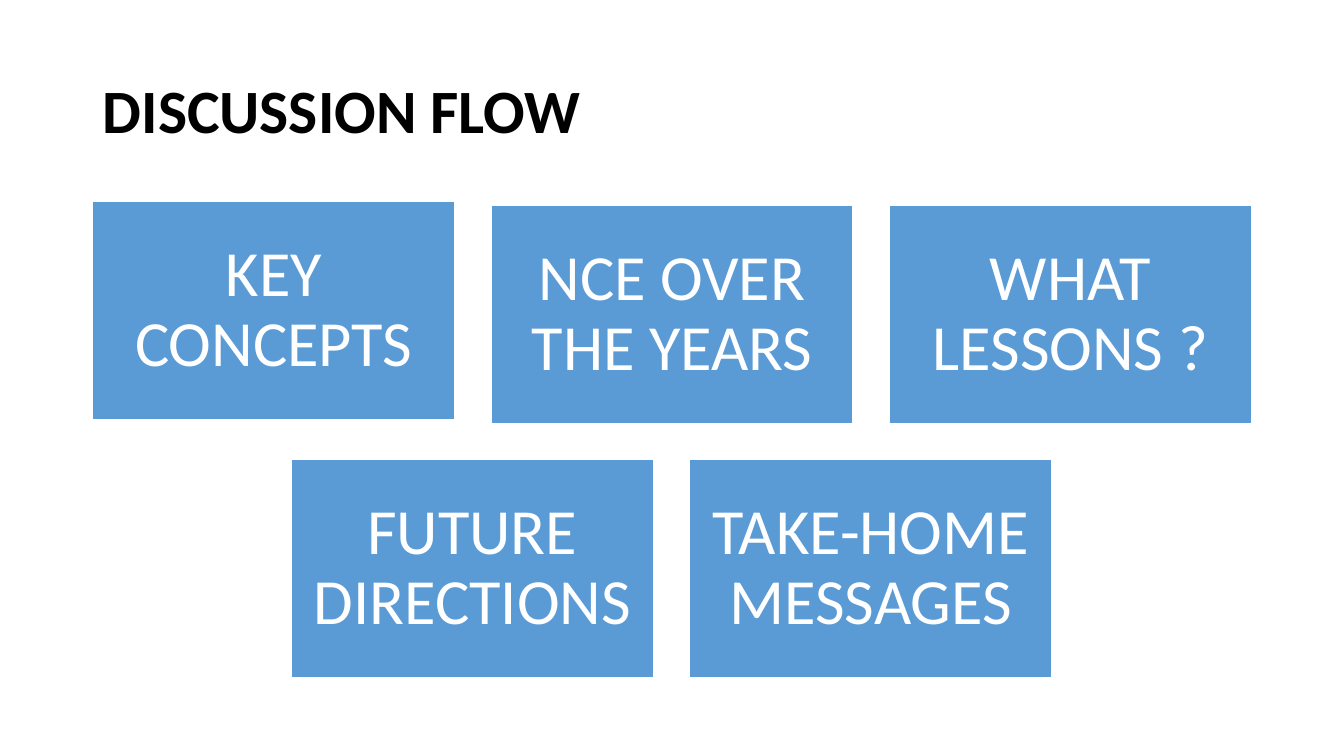
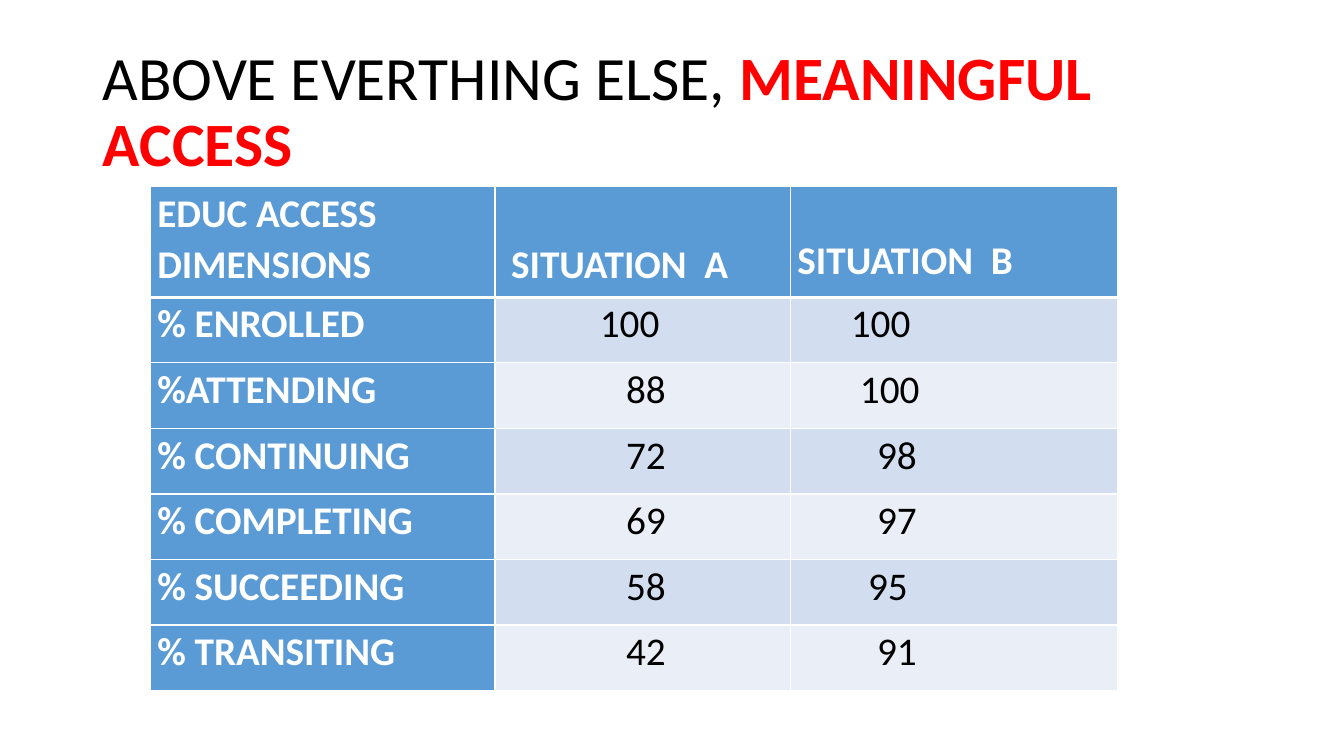
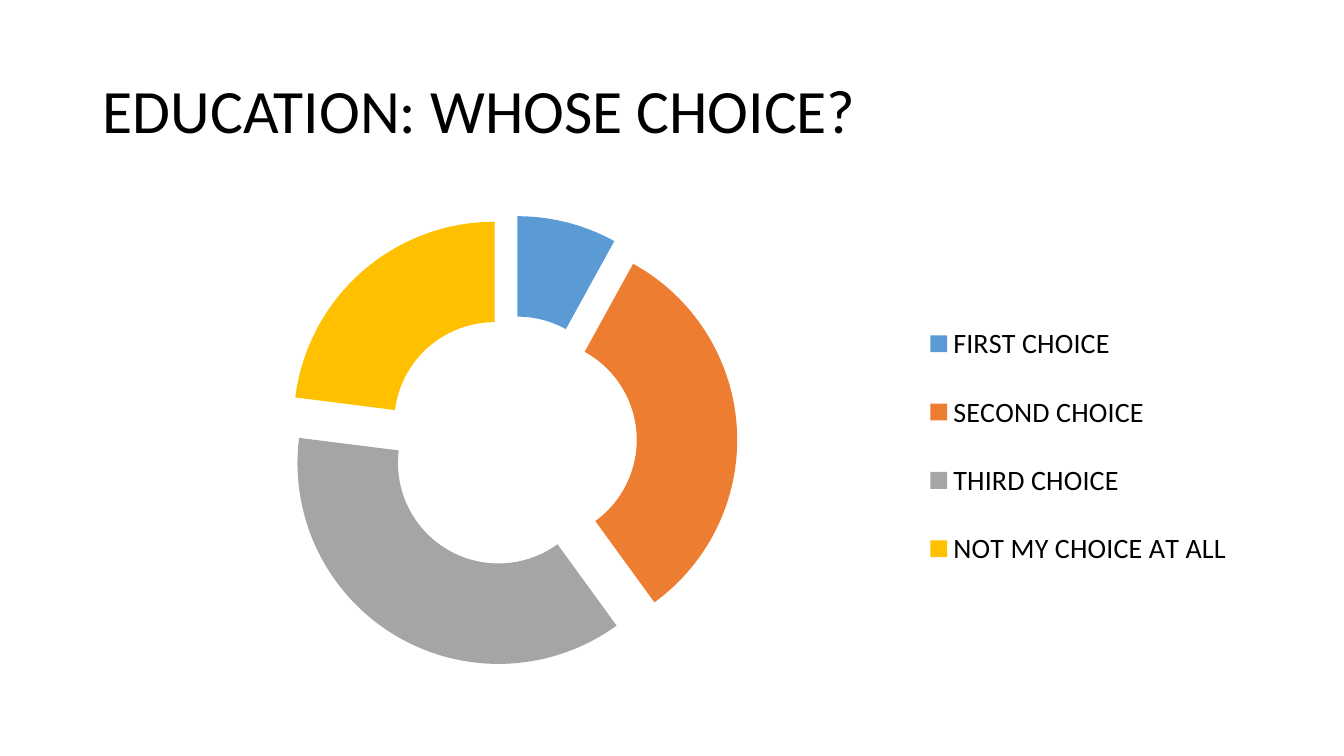
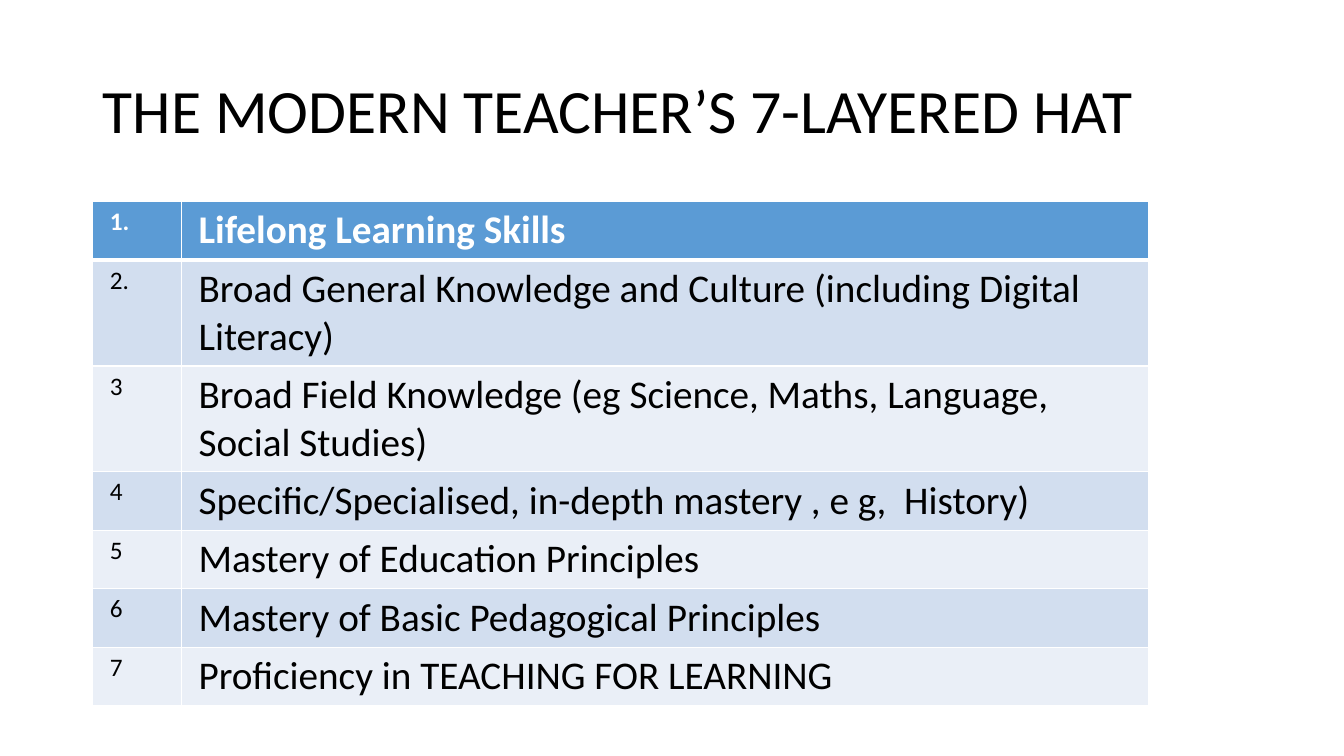
from dataclasses import dataclass
from typing import NamedTuple

from lxml.etree import SubElement
from pptx import Presentation
from pptx.chart.data import CategoryChartData
from pptx.dml.color import RGBColor
from pptx.enum.chart import XL_CHART_TYPE, XL_LEGEND_POSITION
from pptx.enum.shapes import MSO_SHAPE
from pptx.enum.text import MSO_ANCHOR, MSO_AUTO_SIZE, PP_ALIGN
from pptx.oxml import parse_xml
from pptx.oxml.ns import nsdecls, qn
from pptx.util import Emu, Pt

SCALE = 9144  # EMU per px, 100 px to the inch
FONT = "Calibri"
BLACK = RGBColor(0x00, 0x00, 0x00)
WHITE = RGBColor(0xFF, 0xFF, 0xFF)
RED = RGBColor(0xFF, 0x00, 0x00)
BLUE = RGBColor(0x5B, 0x9B, 0xD5)
ORANGE = RGBColor(0xED, 0x7D, 0x31)
GREY = RGBColor(0xA5, 0xA5, 0xA5)
GOLD = RGBColor(0xFF, 0xC0, 0x00)
BANDS = (RGBColor(0xEA, 0xEF, 0xF7), RGBColor(0xD2, 0xDE, 0xEF))


class Part(NamedTuple):
    text: str
    color: RGBColor = BLACK
    bold: bool = False


class Cell(NamedTuple):
    text: str
    size: int = 28
    indent: int = 0
    lift: int | None = None  # gap below text that stands at the bottom


class Slice(NamedTuple):
    name: str
    value: int
    color: RGBColor


@dataclass(frozen=True)
class Grid:
    left: int
    top: int
    cols: list[int]
    rows: list[int]
    pad_x: int
    pad_y: int
    lead: float
    side_head: bool


def px(count: int) -> Emu:
    return Emu(count * SCALE)


def box(left: int, top: int, width: int, height: int) -> tuple[Emu, ...]:
    return px(left), px(top), px(width), px(height)


def style(font, size: int, color: RGBColor, bold: bool = False) -> None:
    font.name, font.size, font.bold = FONT, Pt(size), bold
    font.color.rgb = color


def add_slide(deck, *parts: Part):
    """Add a slide whose title is made of the parts."""
    slide = deck.slides.add_slide(deck.slide_layouts[5])
    title = slide.shapes.title
    title.left, title.top, title.width, title.height = box(92, 40, 1150, 145)
    frame = title.text_frame
    frame.auto_size = MSO_AUTO_SIZE.NONE
    frame.vertical_anchor = MSO_ANCHOR.MIDDLE
    line = frame.paragraphs[0]
    line.alignment, line.line_spacing = PP_ALIGN.LEFT, 0.9
    style(line.font, 44, BLACK)
    for part in parts:
        run = line.add_run()
        run.text = part.text
        run.font.bold = part.bold
        run.font.color.rgb = part.color
    return slide


def add_tile(slide, text: str, left: int, top: int) -> None:
    tile = slide.shapes.add_shape(MSO_SHAPE.RECTANGLE, *box(left, top, 359, 216))
    tile.shadow.inherit = False
    tile.fill.solid()
    tile.fill.fore_color.rgb = BLUE
    tile.line.color.rgb = WHITE
    tile.line.width = Pt(1)
    frame = tile.text_frame
    frame.word_wrap = True
    frame.vertical_anchor = MSO_ANCHOR.MIDDLE
    frame.margin_left = frame.margin_right = px(19)
    frame.margin_top = frame.margin_bottom = px(19)
    line = frame.paragraphs[0]
    line.text = text
    line.alignment, line.line_spacing = PP_ALIGN.CENTER, 0.9
    style(line.font, 46, WHITE)


def add_edges(cell, row: int) -> None:
    """Give a cell white borders, thick below the first row."""
    props = cell._tc.get_or_add_tcPr()
    for side in "LRTB":
        thick = (row, side) in ((0, "B"), (1, "T"))
        edge = SubElement(props, qn(f"a:ln{side}"), w=str(Pt(3 if thick else 1)))
        fill = SubElement(edge, qn("a:solidFill"))
        SubElement(fill, qn("a:srgbClr"), val=str(WHITE))


def add_grid(slide, grid: Grid, cells: list[list[Cell]]) -> None:
    area = box(grid.left, grid.top, sum(grid.cols), sum(grid.rows))
    table = slide.shapes.add_table(len(grid.rows), len(grid.cols), *area).table
    for col, width in zip(table.columns, grid.cols):
        col.width = px(width)
    for row, height in zip(table.rows, grid.rows):
        row.height = px(height)
    for r, items in enumerate(cells):
        for c, item in enumerate(items):
            cell = table.cell(r, c)
            head = r == 0 or (grid.side_head and c == 0)
            add_edges(cell, r)
            cell.fill.solid()
            cell.fill.fore_color.rgb = BLUE if head else BANDS[r % 2]
            cell.margin_left = cell.margin_right = px(grid.pad_x)
            cell.margin_top = cell.margin_bottom = px(grid.pad_y)
            if item.lift is not None:
                cell.vertical_anchor = MSO_ANCHOR.BOTTOM
                cell.margin_bottom = px(item.lift)
            line = cell.text_frame.paragraphs[0]
            line.text = item.text
            line.line_spacing = grid.lead
            line._p.get_or_add_pPr().set("marL", str(px(item.indent)))
            style(line.font, item.size, WHITE if head else BLACK, head)


def add_ring(slide, slices: list[Slice]) -> None:
    data = CategoryChartData()
    data.categories = [item.name for item in slices]
    data.add_series("Series 1", [item.value for item in slices])
    area = box(92, 200, 1150, 476)
    chart = slide.shapes.add_chart(XL_CHART_TYPE.DOUGHNUT, *area, data).chart
    chart.has_title = False
    style(chart.font, 10, BLACK)
    plot = chart.plots[0]
    plot.vary_by_categories = True
    series = plot.series[0]
    burst = parse_xml(f'<c:explosion {nsdecls("c")} val="25"/>')
    series._element.find(qn("c:tx")).addnext(burst)
    for index, item in enumerate(slices):
        fill = series.points[index].format.fill
        fill.solid()
        fill.fore_color.rgb = item.color
    chart.has_legend = True
    legend = chart.legend
    legend.position = XL_LEGEND_POSITION.RIGHT
    legend.include_in_layout = False
    style(legend.font, 20, BLACK)
    old = legend._element.find(qn("c:layout"))
    if old is not None:
        legend._element.remove(old)
    layout = parse_xml(f'<c:layout {nsdecls("c")}/>')
    frame = SubElement(layout, qn("c:manualLayout"))
    for tag, val in (("xMode", "edge"), ("yMode", "edge"), ("x", "0.71"),
                     ("y", "0.19"), ("w", "0.28"), ("h", "0.64")):
        SubElement(frame, qn(f"c:{tag}"), val=val)
    legend._element.find(qn("c:legendPos")).addnext(layout)


def draw_flow(deck) -> None:
    slide = add_slide(deck, Part("DISCUSSION FLOW", bold=True))
    pitch = 395
    add_tile(slide, "KEY CONCEPTS", 92, 200)
    for n, text in enumerate(("NCE OVER THE YEARS", "WHAT LESSONS ?"), 1):
        add_tile(slide, text, 92 + n * pitch, 204)
    for n, text in enumerate(("FUTURE DIRECTIONS", "TAKE-HOME MESSAGES")):
        add_tile(slide, text, 92 + pitch // 2 + n * pitch, 456)


def draw_access(deck) -> None:
    slide = add_slide(deck, Part("ABOVE EVERTHING ELSE, "),
                      Part("MEANINGFUL ACCESS", RED, True))
    cells = [[Cell("EDUC ACCESS DIMENSIONS"),
              Cell("SITUATION  A", indent=9, lift=8),
              Cell("SITUATION  B", lift=12)]]
    for name, first, left, second, right in (
        ("% ENROLLED", 100, 97, 100, 53),
        ("%ATTENDING", 88, 123, 100, 62),
        ("% CONTINUING", 72, 123, 98, 79),
        ("% COMPLETING", 69, 123, 97, 79),
        ("% SUCCEEDING", 58, 123, 95, 70),
        ("% TRANSITING", 42, 123, 91, 79),
    ):
        cells.append([Cell(name), Cell(str(first), indent=left),
                      Cell(str(second), indent=right)])
    add_grid(slide, Grid(149, 185, [342, 293, 324], [110] + [65] * 6,
                         7, 0, 1.07, True), cells)


def draw_choice(deck) -> None:
    slide = add_slide(deck, Part("EDUCATION: WHOSE CHOICE?"))
    add_ring(slide, [
        Slice("FIRST CHOICE", 8, BLUE),
        Slice("SECOND CHOICE", 32, ORANGE),
        Slice("THIRD CHOICE", 37, GREY),
        Slice("NOT MY CHOICE AT ALL", 23, GOLD),
    ])


def draw_hat(deck) -> None:
    slide = add_slide(deck, Part("THE MODERN TEACHER’S 7-LAYERED HAT"))
    layers = (
        ("1.", "Lifelong Learning Skills"),
        ("2.", "Broad General Knowledge and Culture (including Digital Literacy)"),
        ("3", "Broad Field Knowledge (eg Science, Maths, Language, Social Studies)"),
        ("4", "Specific/Specialised, in-depth mastery , e g,  History)"),
        ("5", "Mastery of Education Principles"),
        ("6", "Mastery of Basic Pedagogical Principles"),
        ("7", "Proficiency in TEACHING FOR LEARNING"),
    )
    add_grid(slide, Grid(92, 200, [88, 959], [58] + [105] * 2 + [58] * 4,
                         17, 5, 1.0, False),
             [[Cell(mark, 18), Cell(text)] for mark, text in layers])


def main() -> None:
    deck = Presentation()
    deck.slide_width, deck.slide_height = px(1333), px(750)
    for draw in (draw_flow, draw_access, draw_choice, draw_hat):
        draw(deck)
    deck.save("out.pptx")


if __name__ == "__main__":
    main()
